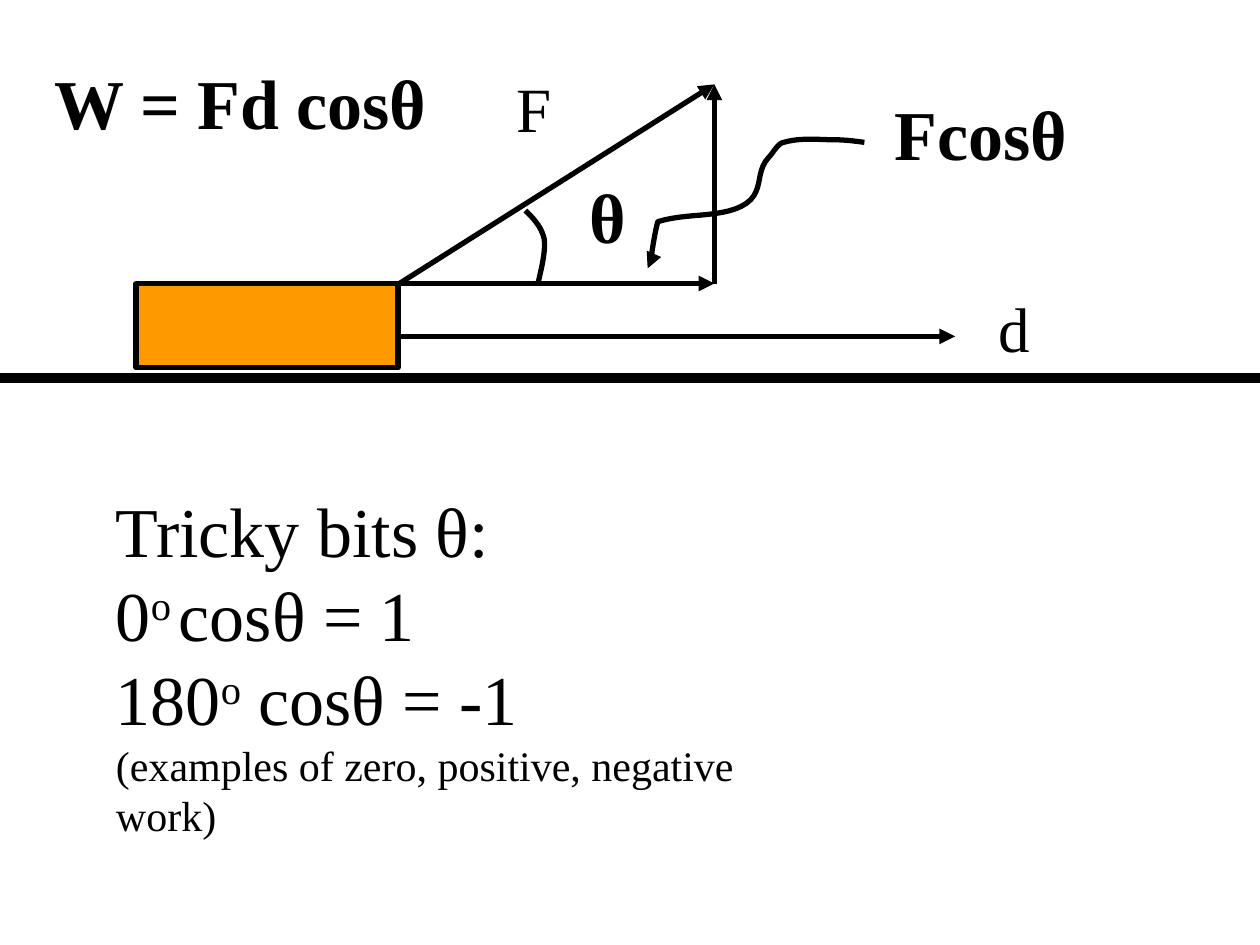
"""Build the slide on work done by a force at an angle."""
from dataclasses import dataclass
from typing import Any

import pptx
import pptx.dml.color
import pptx.enum.shapes
import pptx.enum.text
import pptx.oxml.ns
import pptx.oxml.xmlchemy
import pptx.util
from pptx.util import Inches

Point = tuple[float, float]
Curve = tuple[Point, Point, Point]


@dataclass(frozen=True)
class Theme:
    font: str = "Times New Roman"
    ink: str = "000000"
    block: str = "FF9900"
    formula: int = 40
    label: int = 36
    note: int = 24
    stroke: float = 3
    ground: float = 6


@dataclass(frozen=True)
class Label:
    text: str
    box: tuple[float, float, float, float]
    size: int
    bold: bool = False


@dataclass(frozen=True)
class Line:
    start: Point
    end: Point
    width: float = 3
    arrow: bool = True


@dataclass(frozen=True)
class Path:
    start: Point
    curves: tuple[Curve, ...]
    arrow: bool = False


THEME = Theme()
CORNER, TIP, FOOT = (3.17, 2.25), (5.67, 0.67), (5.67, 2.25)
GROUND = Line((0, 3), (10, 3), THEME.ground, arrow=False)
VECTORS = (
    Line(CORNER, TIP, THEME.stroke),
    Line((3.17, 2.67), (7.58, 2.67), THEME.stroke),
    Line(CORNER, FOOT, THEME.stroke),
    Line(FOOT, TIP, THEME.stroke),
)
LABELS = (
    Label("F", (4, 0.5, 0.48, 0.7), THEME.label),
    Label("d", (7.83, 2.25, 0.45, 0.7), THEME.label),
    Label("θ", (4.58, 1.33, 0.49, 0.77), THEME.formula, bold=True),
    Label("Fcosθ", (7, 0.67, 1.57, 0.77), THEME.formula, bold=True),
)
ANGLE = Path((4.17, 1.67), (
    ((4.23, 1.73), (4.3, 1.8), (4.32, 1.9)),
    ((4.33, 2), (4.3, 2.12), (4.27, 2.25)),
))
POINTER = Path((6.86, 1.13), (
    ((6.78, 1.12), (6.71, 1.11), (6.63, 1.11)),
    ((6.5, 1.11), (6.36, 1.09), (6.22, 1.13)),
    ((6.17, 1.14), (6.14, 1.21), (6.1, 1.25)),
    ((5.98, 1.38), (6.08, 1.54), (5.88, 1.64)),
    ((5.69, 1.73), (5.44, 1.69), (5.22, 1.76)),
    ((5.19, 1.88), (5.18, 1.97), (5.16, 2.09)),
    ((5.14, 2.22), (5.14, 2.15), (5.14, 2.13)),
), arrow=True)
NOTES = (
    (THEME.formula, ("Tricky bits θ:",)),
    (THEME.formula, ("0", "o", "\tcosθ = 1")),
    (THEME.formula, ("180", "o", " cosθ = -1")),
    (THEME.note, ("(examples of zero, positive, negative work)",)),
)


def color(value: str) -> pptx.dml.color.RGBColor:
    """Turn a hex string into a colour."""
    return pptx.dml.color.RGBColor.from_string(value)


def apply(target: Any, **values: Any) -> None:
    """Set each named attribute on the target."""
    for name, value in values.items():
        setattr(target, name, value)


def sub(parent: Any, tag: str, **attributes: str) -> Any:
    """Append a DrawingML element with attributes."""
    child = parent.makeelement(pptx.oxml.ns.qn(tag), attributes)
    parent.append(child)
    return child


def add_run(p: Any, text: str, size: int, bold: bool = False) -> Any:
    """Add a formatted run to a paragraph."""
    r = p.add_run()
    r.text = text
    apply(r.font, name=THEME.font, size=pptx.util.Pt(size), bold=bold)
    r.font.color.rgb = color(THEME.ink)
    return r


def set_frame(tf: Any, wrap: bool) -> None:
    """Anchor a text frame at the top and let it grow."""
    apply(tf, word_wrap=wrap,
          vertical_anchor=pptx.enum.text.MSO_ANCHOR.TOP,
          auto_size=pptx.enum.text.MSO_AUTO_SIZE.SHAPE_TO_FIT_TEXT)


def place(shape: Any, left: float, top: float, width: float, height: float) -> None:
    """Move and size a shape in inches."""
    apply(shape, left=Inches(left), top=Inches(top), width=Inches(width), height=Inches(height))


def ink_line(shape: Any, width: float, arrow: bool = False) -> None:
    """Give a shape a solid outline and an optional end arrowhead."""
    shape.line.width = pptx.util.Pt(width)
    shape.line.color.rgb = color(THEME.ink)
    if arrow:
        sub(shape.line._get_or_add_ln(), "a:tailEnd", type="triangle")


def draw_line(shapes: Any, line: Line) -> None:
    """Draw a straight connector."""
    ends = (Inches(v) for v in (*line.start, *line.end))
    connector = shapes.add_connector(pptx.enum.shapes.MSO_CONNECTOR.STRAIGHT, *ends)
    ink_line(connector, line.width, line.arrow)
    sub(connector._element.spPr, "a:effectLst")


def draw_label(shapes: Any, label: Label) -> None:
    """Draw an unwrapped text label."""
    tf = shapes.add_textbox(*(Inches(v) for v in label.box)).text_frame
    set_frame(tf, wrap=False)
    add_run(tf.paragraphs[0], label.text, label.size, label.bold)


def bezier(points: tuple[Point, ...], t: float) -> Point:
    """Return the point at t on a cubic curve."""
    weights = ((1 - t) ** 3, 3 * t * (1 - t) ** 2, 3 * t * t * (1 - t), t ** 3)
    x, y = (sum(w * v for w, v in zip(weights, axis)) for axis in zip(*points))
    return Inches(x), Inches(y)


def draw_path(shapes: Any, path: Path, steps: int = 12) -> None:
    """Draw joined cubic curves as an open outline."""
    start, points = path.start, []
    for curve in path.curves:
        points += [bezier((start, *curve), i / steps) for i in range(1, steps + 1)]
        start = curve[-1]
    builder = shapes.build_freeform(*(Inches(v) for v in path.start))
    builder.add_line_segments(points, close=False)
    shape = builder.convert_to_shape()
    shape.shadow.inherit = False
    shape.fill.background()
    ink_line(shape, THEME.stroke, path.arrow)


def fill_title(title: Any) -> None:
    """Write the formula in the title placeholder."""
    place(title, 0.33, 0.42, 9.33, 0.77)
    set_frame(title.text_frame, wrap=True)
    p = title.text_frame.paragraphs[0]
    p.alignment = pptx.enum.text.PP_ALIGN.LEFT
    add_run(p, "W = Fd cosθ", THEME.formula, bold=True)


def fill_notes(body: Any) -> None:
    """Write the special cases in the body placeholder."""
    place(body, 0.82, 3.82, 5.98, 2.5)
    tf = body.text_frame
    set_frame(tf, wrap=True)
    for i, (size, parts) in enumerate(NOTES):
        p = tf.add_paragraph() if i else tf.paragraphs[0]
        p.space_before = pptx.util.Pt(0)
        pPr = p._p.get_or_add_pPr()
        pPr.set("marL", "0")
        pPr.set("indent", "0")
        sub(pPr, "a:buNone")
        sub(sub(pPr, "a:tabLst"), "a:tab", pos=str(Inches(0.74)), algn="l")
        for part in parts:
            r = add_run(p, part, size)
            if part == "o":
                r.font._element.set("baseline", "30000")


def main() -> None:
    """Build and save the slide."""
    prs = pptx.Presentation()
    apply(prs, slide_width=Inches(10), slide_height=Inches(7.5))
    s = prs.slides.add_slide(prs.slide_layouts[1])
    fill_title(s.shapes.title)
    fill_notes(s.placeholders[1])
    draw_line(s.shapes, GROUND)
    shapes = s.shapes.add_group_shape().shapes
    block = shapes.add_shape(pptx.enum.shapes.MSO_SHAPE.RECTANGLE, 0, 0, 0, 0)
    place(block, 1.08, 2.25, 2.08, 0.67)
    block.shadow.inherit = False
    block.fill.solid()
    block.fill.fore_color.rgb = color(THEME.block)
    ink_line(block, THEME.stroke)
    for vector in VECTORS:
        draw_line(shapes, vector)
    for path in (ANGLE, POINTER):
        draw_path(shapes, path)
    for label in LABELS:
        draw_label(shapes, label)
    prs.save("out.pptx")


if __name__ == "__main__":
    main()
